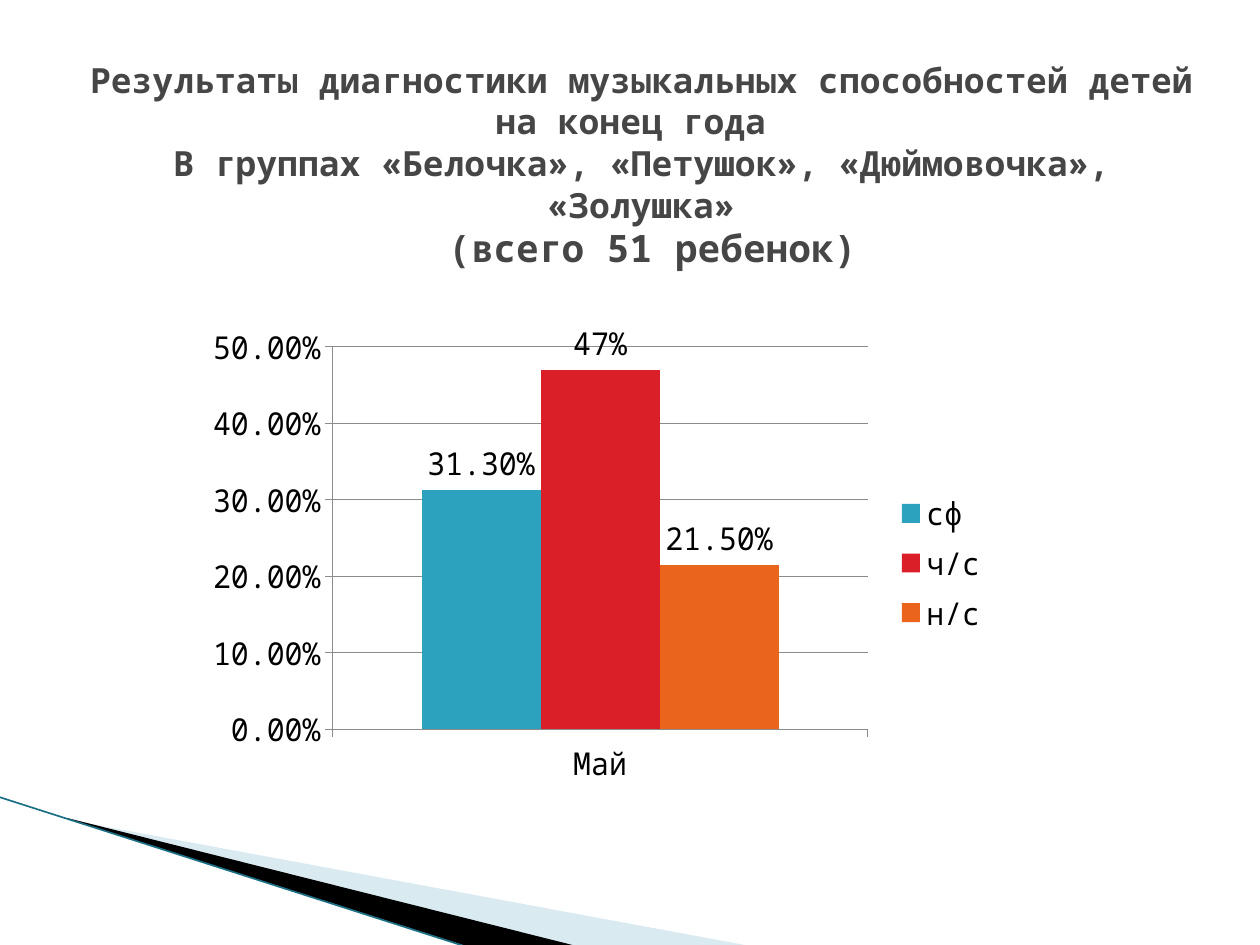
from lxml.etree import SubElement
from pptx import Presentation
from pptx.chart.data import CategoryChartData
from pptx.dml.color import RGBColor
from pptx.enum.chart import XL_CHART_TYPE as ChartType, XL_LABEL_POSITION as LabelPosition
from pptx.enum.chart import XL_LEGEND_POSITION as LegendPosition, XL_TICK_MARK as TickMark
from pptx.enum.shapes import MSO_CONNECTOR as Connector
from pptx.enum.text import MSO_ANCHOR as Anchor, PP_ALIGN as Align
from pptx.oxml import parse_xml
from pptx.oxml.ns import nsdecls, qn
from pptx.util import Pt

PX = 914400 // 126
FONT = "Noto Sans Mono"
COLORS = {"title": "464646", "text": "000000", "grid": "8B8B8B",
          "pale": "A0CBDC", "black": "000000", "edge": "1B7086"}

TITLE = [
    ("Результаты диагностики музыкальных способностей детей на конец года ", 19.8),
    ("В группах «Белочка», «Петушок», «Дюймовочка», «Золушка»", 19.8),
    (" (всего 51 ребенок)", 21.6),
]
TITLE_BOX = (74, 86, 1134, 157)
CHART_BOX = (213, 314, 787, 498)
PLOT = {"x": 0.106, "y": 0.066, "w": 0.717, "h": 0.768}
CATEGORIES = ["Май"]
SERIES = [
    ("сф", 0.313, "2DA2BF", "0.00%"),
    ("ч/с", 0.47, "DA1F28", "0%"),
    ("н/с", 0.215, "EB641B", "0.00%"),
]
WEDGES = [
    ("pale", 40, [(69, 820), (750, 946), (575, 946), (69, 819)]),
    ("black", 100, [(67, 818), (576, 946), (469, 947), (68, 819)]),
]
EDGE = (-1, 797, 467, 947)


def px(values):
    return [value * PX for value in values]


def rgb(name):
    return RGBColor.from_string(COLORS.get(name, name))


def add_wedge(slide, color, opacity, points):
    builder = slide.shapes.build_freeform(*points[0], scale=PX)
    builder.add_line_segments(points[1:], close=True)
    shape = builder.convert_to_shape()
    shape.shadow.inherit = False
    shape.line.fill.background()
    shape.fill.solid()
    shape.fill.fore_color.rgb = rgb(color)
    if opacity < 100:
        srgb = shape.fill._xPr.find(".//" + qn("a:srgbClr"))
        SubElement(srgb, qn("a:alpha"), val=str(opacity * 1000))


def add_edge(slide):
    line = slide.shapes.add_connector(Connector.STRAIGHT, *px(EDGE))
    line.line.color.rgb = rgb("edge")
    line.line.width = Pt(0.95)
    SubElement(line._element.spPr, qn("a:effectLst"))


def add_title(slide):
    frame = slide.shapes.add_textbox(*px(TITLE_BOX)).text_frame
    frame.word_wrap = True
    frame.vertical_anchor = Anchor.MIDDLE
    paragraph = frame.paragraphs[0]
    paragraph.text = "\v".join(text for text, size in TITLE)
    paragraph.alignment = Align.CENTER
    for run, (text, size) in zip(paragraph.runs, TITLE):
        run.font.name = FONT
        run.font.size = Pt(size)
        run.font.bold = True
        run.font.color.rgb = rgb("title")


def add_results_chart(slide):
    data = CategoryChartData(number_format="0.00%")
    data.categories = CATEGORIES
    for name, value, color, number_format in SERIES:
        data.add_series(name, [value], number_format)
    chart = slide.shapes.add_chart(ChartType.COLUMN_CLUSTERED, *px(CHART_BOX), data).chart
    chart.has_title = False
    chart.font.name = FONT
    chart.font.size = Pt(18)
    chart.font.color.rgb = rgb("text")
    chart.has_legend = True
    chart.legend.position = LegendPosition.RIGHT
    chart.legend.include_in_layout = False

    value_axis = chart.value_axis
    value_axis.has_major_gridlines = True
    value_axis.minimum_scale, value_axis.maximum_scale, value_axis.major_unit = 0, 0.5, 0.1
    value_axis.tick_labels.number_format = "0.00%"
    value_axis.tick_labels.number_format_is_linked = False
    for axis in (value_axis, chart.category_axis):
        axis.major_tick_mark = TickMark.OUTSIDE
        axis.format.line.color.rgb = rgb("grid")
    value_axis.major_gridlines.format.line.color.rgb = rgb("grid")

    plot = chart.plots[0]
    plot.gap_width = 150
    plot.overlap = 0
    plot.vary_by_categories = False
    for series, (name, value, color, number_format) in zip(plot.series, SERIES):
        series.format.fill.solid()
        series.format.fill.fore_color.rgb = rgb(color)
        labels = series.data_labels
        labels.show_value = True
        labels.number_format = number_format
        labels.number_format_is_linked = False
        labels.position = LabelPosition.OUTSIDE_END

    modes = "".join(f'<c:{key}Mode val="edge"/>' for key in "xy")
    sizes = "".join(f'<c:{key} val="{value}"/>' for key, value in PLOT.items())
    layout = parse_xml(
        f'<c:layout {nsdecls("c")}><c:manualLayout><c:layoutTarget val="inner"/>'
        f"{modes}{sizes}</c:manualLayout></c:layout>")
    plot_area = chart._chartSpace.chart.plotArea
    for old_layout in plot_area.findall(qn("c:layout")):
        plot_area.remove(old_layout)
    plot_area.insert(0, layout)


def main():
    presentation = Presentation()
    presentation.slide_width, presentation.slide_height = px((1260, 945))
    slide = presentation.slides.add_slide(presentation.slide_layouts[6])
    for wedge in WEDGES:
        add_wedge(slide, *wedge)
    add_edge(slide)
    add_title(slide)
    add_results_chart(slide)
    presentation.save("out.pptx")


if __name__ == "__main__":
    main()
